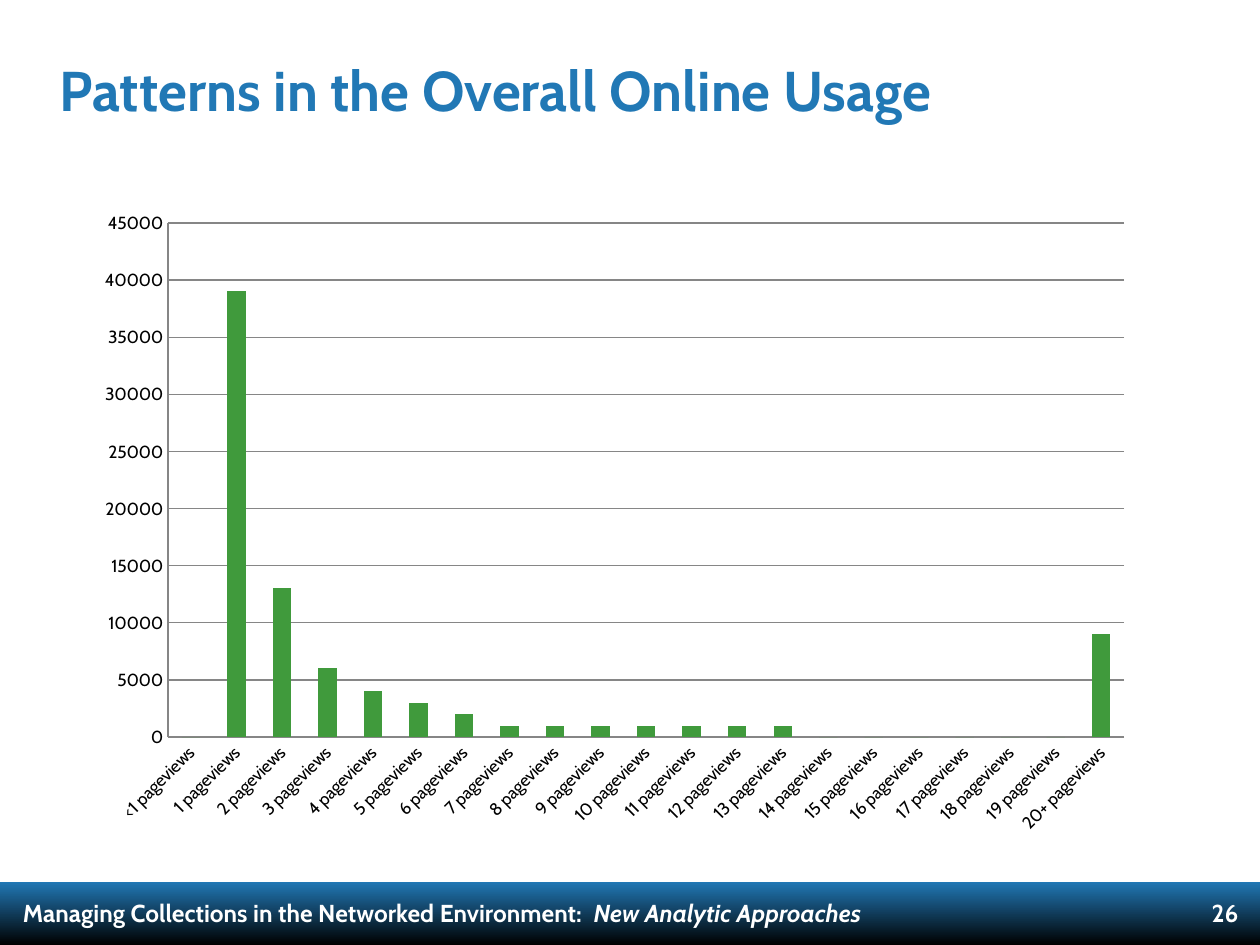
from lxml import etree
from pptx import Presentation
from pptx import util as u
from pptx.chart import data as chart_data
from pptx.dml.color import RGBColor
from pptx.enum import chart as charts, shapes, text
from pptx.oxml import parse_xml
from pptx.oxml.ns import nsdecls, qn

COLORS = {"blue": "2178B5", "black": "000000", "white": "FFFFFF",
          "green": "409A3C", "grid": "868686"}
FONT = "Cabin"
PAGEVIEWS = ([0, 39000, 13000, 6000, 4000, 3000, 2000] + [1000] * 7
             + [0] * 6 + [9000])
CATEGORIES = (["<1 pageviews"] + [f"{count} pageviews" for count in range(1, 20)]
              + ["20+ pageviews"])


def color(name):
    return RGBColor.from_string(COLORS[name])


def box(left, top, width, height):
    return [u.Pt(length) for length in (left, top, width, height)]


class SlideBuilder:
    def __init__(self, slide):
        self.slide = slide

    def gradient_bar(self, bounds, top_color, bottom_color):
        shape = self.slide.shapes.add_shape(shapes.MSO_SHAPE.RECTANGLE, *box(*bounds))
        shape.shadow.inherit = False
        shape.line.fill.background()
        shape.fill.gradient()
        shape.fill.gradient_angle = 270
        for stop, name, position in zip(shape.fill.gradient_stops,
                                        (top_color, bottom_color), (0, 1)):
            stop.color.rgb = color(name)
            stop.position = position

    def text_box(self, bounds, runs, size, color_name, align=text.PP_ALIGN.LEFT,
                 anchor=text.MSO_ANCHOR.TOP, margins=None, spacing=None):
        """Runs are (wording, italic) pairs; margins None keeps the default insets."""
        frame = self.slide.shapes.add_textbox(*box(*bounds)).text_frame
        frame.word_wrap = True
        frame.vertical_anchor = anchor
        if margins is not None:
            frame.margin_left = frame.margin_right = u.Pt(margins)
            frame.margin_top = frame.margin_bottom = u.Pt(margins)
        paragraph = frame.paragraphs[0]
        paragraph.alignment = align
        paragraph.line_spacing = spacing
        for wording, italic in runs:
            run = paragraph.add_run()
            run.text = wording
            font = run.font
            font.name, font.size = FONT, u.Pt(size)
            font.bold, font.italic = True, italic
            font.color.rgb = color(color_name)

    def column_chart(self, bounds, categories, values, plot_layout):
        """plot_layout gives x, y, w, h of the plot area as shares of the chart."""
        data = chart_data.CategoryChartData()
        data.categories = categories
        data.add_series("Series 1", values)
        chart = self.slide.shapes.add_chart(
            charts.XL_CHART_TYPE.COLUMN_CLUSTERED, *box(*bounds), data).chart
        chart.has_legend = chart.has_title = False
        chart.font.name, chart.font.size = FONT, u.Pt(10)
        chart.font.color.rgb = color("black")

        plot = chart.plots[0]
        plot.gap_width = 150
        plot.vary_by_categories = False
        fill = plot.series[0].format.fill
        fill.solid()
        fill.fore_color.rgb = color("green")

        value_axis, category_axis = chart.value_axis, chart.category_axis
        value_axis.minimum_scale, value_axis.maximum_scale = 0, 45000
        value_axis.major_unit = 5000
        value_axis.has_major_gridlines = True
        value_axis.tick_labels.number_format = "General"
        value_axis.tick_labels.number_format_is_linked = False
        for axis in (value_axis, category_axis):
            axis.major_tick_mark = charts.XL_TICK_MARK.NONE
            axis.minor_tick_mark = charts.XL_TICK_MARK.NONE
        for part in (value_axis, category_axis, value_axis.major_gridlines):
            part.format.line.color.rgb = color("grid")
            part.format.line.width = u.Pt(0.75)

        category_axis.tick_labels.font.size = u.Pt(10)
        body = next(chart.element.iter(qn("c:catAx"))).find(
            f"{qn('c:txPr')}/{qn('a:bodyPr')}")
        body.set("rot", str(-45 * 60000))
        self.place_plot(chart, plot_layout)

    def place_plot(self, chart, plot_layout):
        area = next(chart.element.iter(qn("c:plotArea")))
        for layout in area.findall(qn("c:layout")):
            area.remove(layout)
        layout = parse_xml(f"<c:layout {nsdecls('c')}><c:manualLayout/></c:layout>")
        settings = [("layoutTarget", "inner"), ("xMode", "edge"), ("yMode", "edge")]
        settings += zip("xywh", plot_layout)
        for tag, value in settings:
            etree.SubElement(layout[0], qn(f"c:{tag}")).set("val", str(value))
        area.insert(0, layout)


def main():
    presentation = Presentation()
    presentation.slide_width, presentation.slide_height = u.Pt(720), u.Pt(540)
    slide = presentation.slides.add_slide(presentation.slide_layouts[6])
    builder = SlideBuilder(slide)

    builder.gradient_bar((0, 504, 720, 36), "blue", "black")
    builder.text_box((6, 506.16, 617.76, 25.92),
                     [("Managing Collections in the Networked Environment:  ", False),
                      ("New Analytic Approaches", True)],
                     14, "white", spacing=1.2)
    builder.text_box((666.5, 506.16, 48.24, 25.92), [("26", False)],
                     14, "white", align=text.PP_ALIGN.RIGHT, spacing=1.2)
    builder.text_box((34.2, 11.52, 631.44, 78.48),
                     [("Patterns in the Overall Online Usage", False)],
                     32, "blue", anchor=text.MSO_ANCHOR.MIDDLE, margins=0)
    builder.column_chart((47.5, 112.75, 607, 367.25), CATEGORIES, PAGEVIEWS,
                         (0.08, 0.04, 0.9, 0.8))
    presentation.save("out.pptx")


if __name__ == "__main__":
    main()
